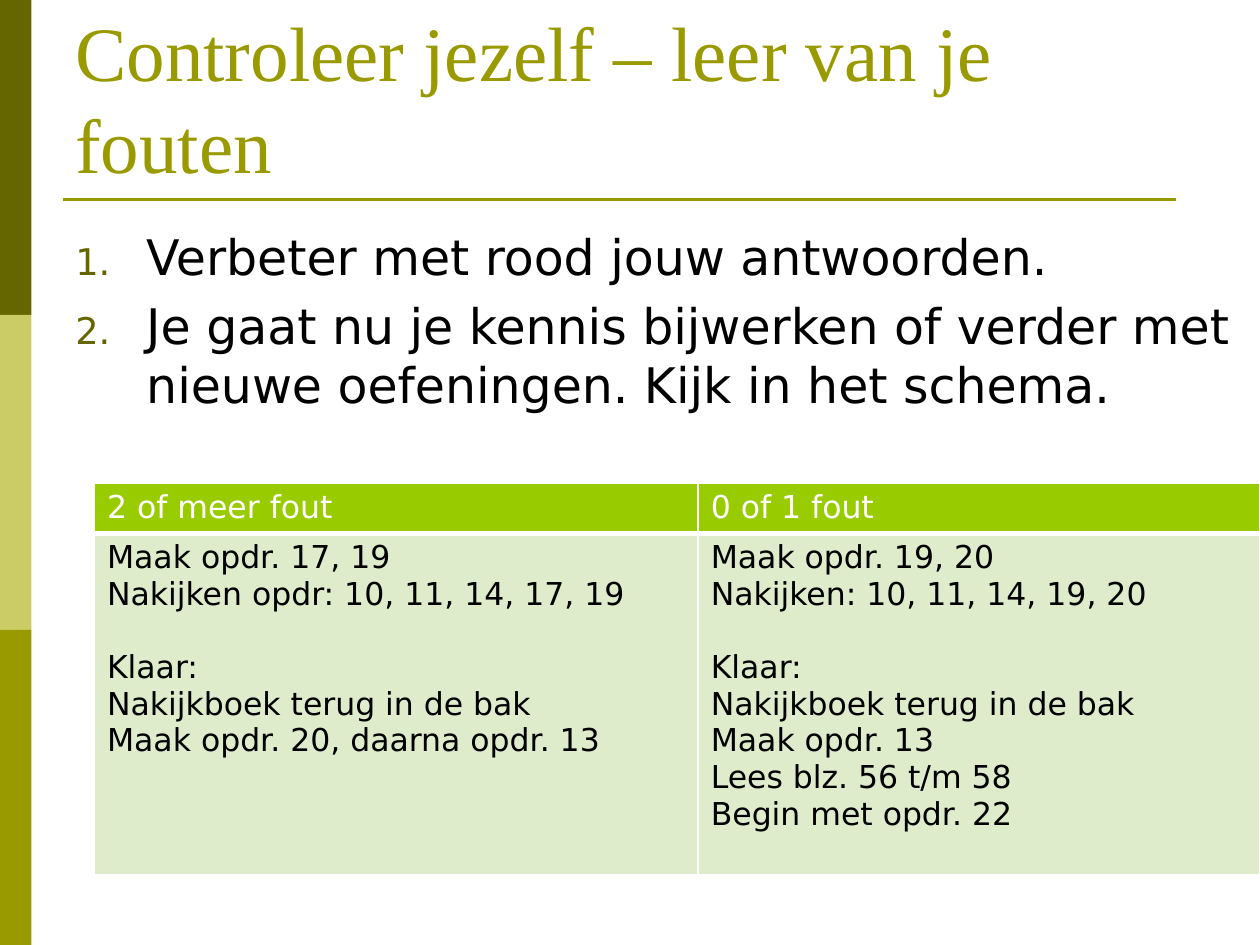
from lxml.etree import SubElement
from pptx import Presentation
from pptx.dml.color import RGBColor as Rgb
from pptx.enum.shapes import MSO_CONNECTOR as Conn, MSO_SHAPE as Form
from pptx.enum.text import MSO_ANCHOR as Anchor
from pptx.oxml import parse_xml
from pptx.oxml.ns import nsdecls, qn
from pptx.util import Pt

HEX = {"dark": "666600", "pale": "CCCC66", "olive": "999900", "black": "000000",
       "white": "FFFFFF", "head": "99CC00", "cell": "DEECCC"}
SANS, SERIF = "DejaVu Sans", "Times New Roman"

TITLE = "Controleer jezelf – leer van je fouten"
STEPS = ["Verbeter met rood jouw antwoorden.",
         "Je gaat nu je kennis bijwerken of verder met nieuwe oefeningen. "
         "Kijk in het schema."]
HEADS = ["2 of meer fout", "0 of 1 fout"]
# Each column holds two groups of lines, set apart by a gap
TASKS = [
    [["Maak opdr. 17, 19", "Nakijken opdr: 10, 11, 14, 17, 19"],
     ["Klaar:", "Nakijkboek terug in de bak", "Maak opdr. 20, daarna opdr. 13"]],
    [["Maak opdr. 19, 20", "Nakijken: 10, 11, 14, 19, 20"],
     ["Klaar:", "Nakijkboek terug in de bak", "Maak opdr. 13",
      "Lees blz. 56 t/m 58", "Begin met opdr. 22"]],
]


def tint(name):
    return Rgb.from_string(HEX[name])


def write(frame, text, size=18, font=SANS, color="black", before=0, first=False):
    """Write text as one paragraph and return it."""
    para = frame.paragraphs[0] if first else frame.add_paragraph()
    para.space_before = Pt(before)
    run = para.add_run()
    run.text = text
    run.font.size, run.font.name = Pt(size), font
    run.font.color.rgb = tint(color)
    return para


def text_box(slide, x, y, w, h, anchor=Anchor.TOP):
    frame = slide.shapes.add_textbox(Pt(x), Pt(y), Pt(w), Pt(h)).text_frame
    frame.word_wrap = True
    frame.vertical_anchor = anchor
    return frame


def side_bar(slide, x, y, w, h):
    part = h / 3
    for i, name in enumerate(["dark", "pale", "olive"]):
        bar = slide.shapes.add_shape(
            Form.RECTANGLE, Pt(x), Pt(y + i * part), Pt(w), Pt(part))
        bar.shadow.inherit = False
        bar.fill.solid()
        bar.fill.fore_color.rgb = tint(name)
        bar.line.fill.background()


def heading(slide, x, y, w, h):
    frame = text_box(slide, x, y, w, h, Anchor.BOTTOM)
    write(frame, TITLE, size=44, font=SERIF, color="olive", first=True)
    base = Pt(y + h + 2.4)
    rule = slide.shapes.add_connector(Conn.STRAIGHT, Pt(x), base, Pt(x + 636), base)
    rule.line.color.rgb = tint("olive")
    rule.line.width = Pt(1.5)
    SubElement(rule._element.spPr, qn("a:effectLst"))


def number(para, indent):
    """Give the paragraph a hanging automatic number."""
    props = para._p.get_or_add_pPr()
    props.set("marL", str(Pt(indent)))
    props.set("indent", str(-Pt(indent)))
    color = SubElement(props, qn("a:buClr"))
    SubElement(color, qn("a:srgbClr"), val=HEX["dark"])
    SubElement(props, qn("a:buSzPct"), val="75000")
    SubElement(props, qn("a:buFont"), typeface=SANS)
    SubElement(props, qn("a:buAutoNum"), type="arabicPeriod")


def step_list(slide, x, y, w, h):
    frame = text_box(slide, x, y, w, h)
    for i, step in enumerate(STEPS):
        number(write(frame, step, size=28, before=5.6, first=i == 0), 40.5)


def style(cell, fill, under=1):
    """Fill the cell and draw white borders, the lower one as wide as under."""
    cell.fill.solid()
    cell.fill.fore_color.rgb = tint(fill)
    props = cell._tc.get_or_add_tcPr()
    for i, (side, width) in enumerate(zip("LRTB", (1, 1, 1, under))):
        props.insert(i, parse_xml(
            f'<a:ln{side} {nsdecls("a")} w="{Pt(width)}"><a:solidFill>'
            f'<a:srgbClr val="{HEX["white"]}"/></a:solidFill></a:ln{side}>'))


def task_table(slide, x, y, w, h):
    top, left = 28.6, 345
    table = slide.shapes.add_table(2, 2, Pt(x), Pt(y), Pt(w), Pt(h)).table
    table.rows[0].height, table.rows[1].height = Pt(top), Pt(h - top)
    table.columns[0].width, table.columns[1].width = Pt(left), Pt(w - left)
    for col, (head, groups) in enumerate(zip(HEADS, TASKS)):
        cell = table.cell(0, col)
        style(cell, "head", under=3)
        write(cell.text_frame, head, color="white", first=True)
        cell = table.cell(1, col)
        style(cell, "cell")
        for g, group in enumerate(groups):
            for i, line in enumerate(group):
                gap = 21 if g and i == 0 else 0
                write(cell.text_frame, line, before=gap, first=g == i == 0)


def main():
    deck = Presentation()
    deck.slide_width, deck.slide_height = Pt(720), Pt(540)
    slide = deck.slides.add_slide(deck.slide_layouts[6])
    side_bar(slide, 0, 0, 18, 540)
    heading(slide, 36, 21.6, 648, 90)
    step_list(slide, 36, 126, 684, 356.4)
    task_table(slide, 54, 276, 666, 223.5)
    deck.save("out.pptx")


if __name__ == "__main__":
    main()
